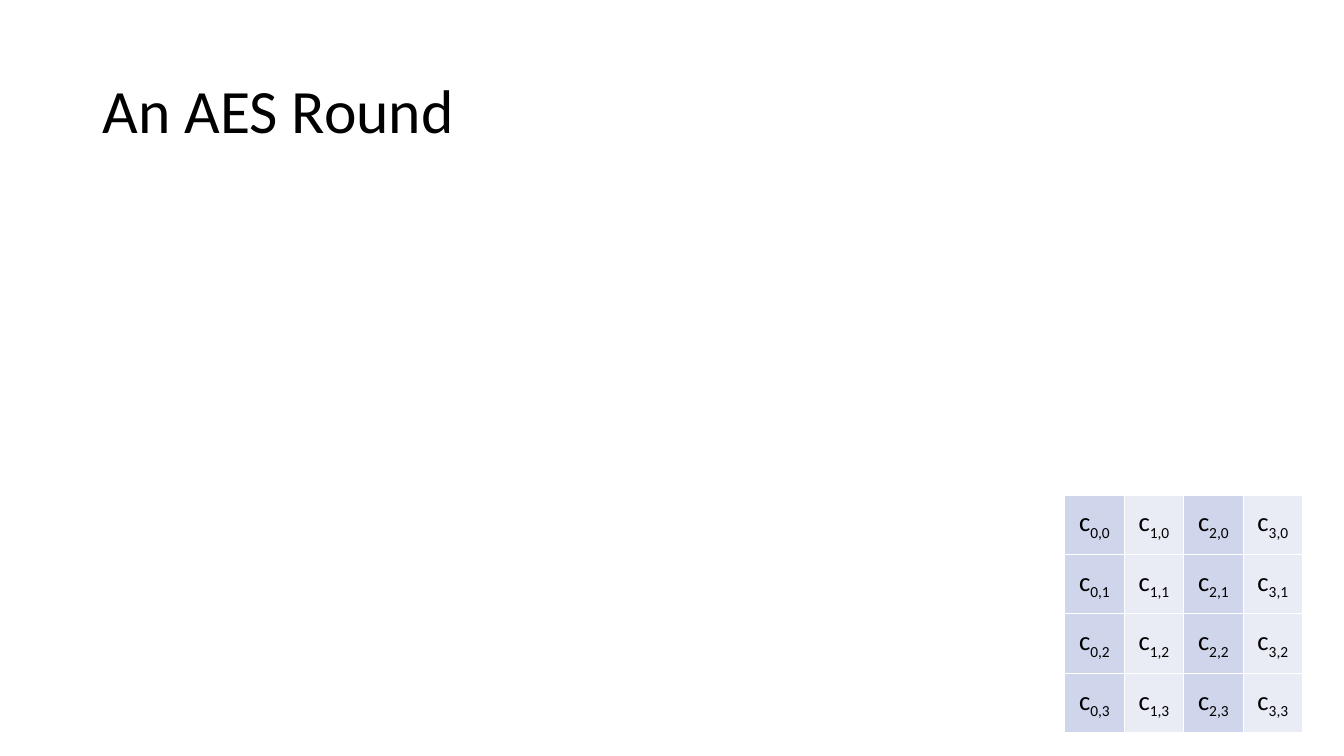
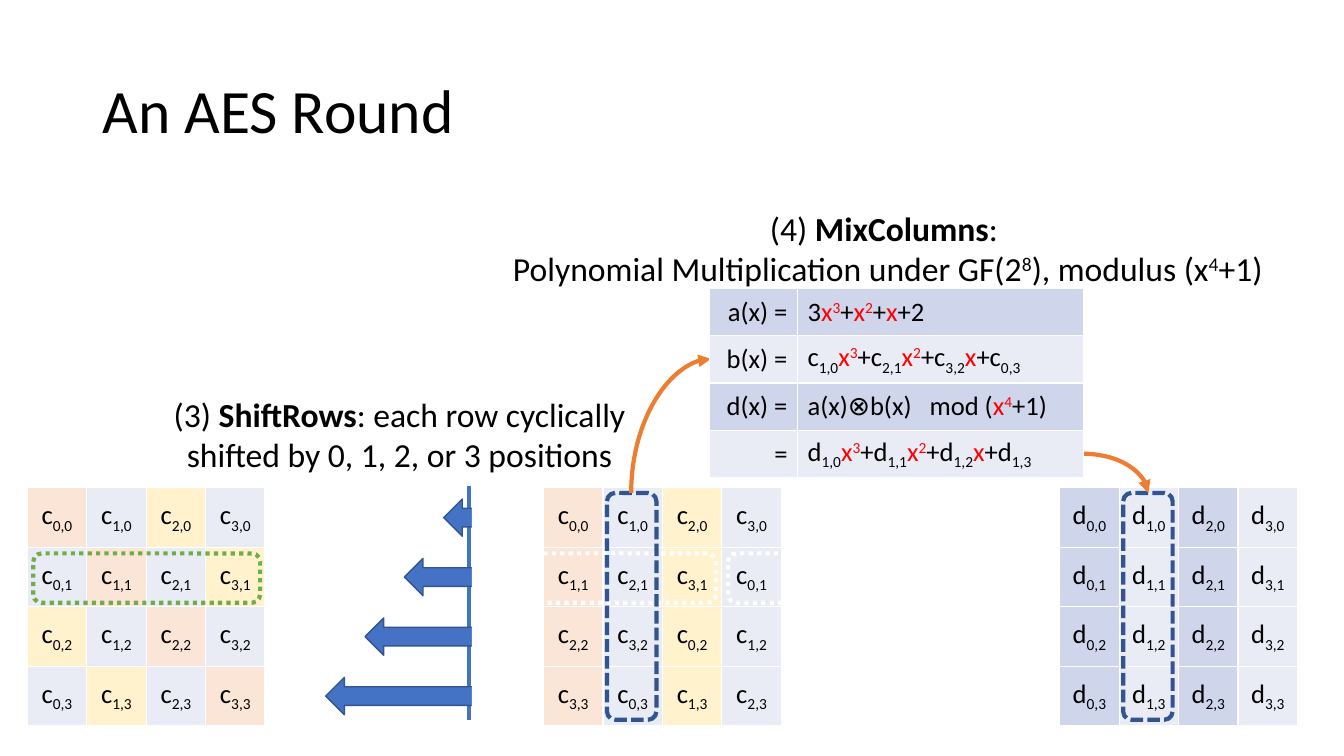
from lxml import etree
from pptx import Presentation
from pptx.dml.color import RGBColor
from pptx.enum.dml import MSO_LINE
from pptx.enum.shapes import MSO_CONNECTOR, MSO_SHAPE
from pptx.enum.text import MSO_ANCHOR, PP_ALIGN
from pptx.oxml.ns import qn
from pptx.util import Inches, Pt

LEFT, CENTER, RIGHT = PP_ALIGN.LEFT, PP_ALIGN.CENTER, PP_ALIGN.RIGHT
MIDDLE = MSO_ANCHOR.MIDDLE
STRAIGHT, CURVE = MSO_CONNECTOR.STRAIGHT, MSO_CONNECTOR.CURVE
DOTTED, DASHED = MSO_LINE.ROUND_DOT, MSO_LINE.SQUARE_DOT
ROUNDED, ARROW, RECTANGLE = (MSO_SHAPE.ROUNDED_RECTANGLE, MSO_SHAPE.RIGHT_ARROW,
                             MSO_SHAPE.RECTANGLE)

FONT = "Calibri"
HEX = {"black": "000000", "white": "FFFFFF", "red": "FF0000", "band": "CFD5EA",
       "pale": "E9EBF5", "peach": "FBE5D6", "yellow": "FFF2CC", "green": "70AD47",
       "blue": "4472C4", "navy": "325491", "orange": "ED7D31"}
COLORS = {name: RGBColor.from_string(value) for name, value in HEX.items()}
STRIPES = ["band", "pale", "band", "pale"]
DIAGONALS = ["peach", "pale", "yellow", "pale"]
CELL = 0.59
GRID_TOP = 4.84


def write(paragraph, markup, size, alignment=LEFT):
    """Parts are split by |; leading marks: _ sub, ^ super, * bold, ! red; / breaks the line."""
    paragraph.alignment = alignment
    paragraph.font.name = FONT
    paragraph.font.size = Pt(size)
    paragraph.font.color.rgb = COLORS["black"]
    for part in markup.split("|"):
        if part == "/":
            paragraph.add_line_break()
            continue
        run = paragraph.add_run()
        run.text = part.lstrip("_^*!")
        marks = part[:len(part) - len(run.text)]
        if "*" in marks:
            run.font.bold = True
        if "!" in marks:
            run.font.color.rgb = COLORS["red"]
        if "_" in marks or "^" in marks:
            baseline = "-25000" if "_" in marks else "30000"
            run.font._element.set("baseline", baseline)


def add_grid(slide, left, top, widths, row_height, rows, alignments):
    """Each cell in rows is a pair of markup and fill name."""
    frame = slide.shapes.add_table(len(rows), len(widths), Inches(left), Inches(top),
                                   Inches(sum(widths)), Inches(row_height * len(rows)))
    table = frame.table
    table.first_row = table.horz_banding = False
    for column, width in zip(table.columns, widths):
        column.width = Inches(width)
    for row_index, row in enumerate(rows):
        table.rows[row_index].height = Inches(row_height)
        for column_index, (markup, fill) in enumerate(row):
            cell = table.cell(row_index, column_index)
            cell.vertical_anchor = MIDDLE
            cell.fill.solid()
            cell.fill.fore_color.rgb = COLORS[fill]
            write(cell.text_frame.paragraphs[0], markup, 19, alignments[column_index])
    return table


presentation = Presentation()
presentation.slide_width = Inches(13.33)
presentation.slide_height = Inches(7.5)

# Both slides: title
slides = []
for _ in range(2):
    slide = presentation.slides.add_slide(presentation.slide_layouts[6])
    title = slide.shapes.add_textbox(Inches(0.92), Inches(0.4), Inches(11.5), Inches(1.45))
    title.text_frame.word_wrap = True
    title.text_frame.vertical_anchor = MIDDLE
    write(title.text_frame.paragraphs[0], "An AES Round", 44)
    title.text_frame.paragraphs[0].line_spacing = 0.9
    slides.append(slide)
start_slide, round_slide = slides

# Both slides: 4 x 4 state grids (letter, row shift, fill colours, diagonal fills)
for slide, left, top, letter, shift, fills, diagonal in [
        (start_slide, 10.56, 4.91, "c", 0, STRIPES, 0),
        (round_slide, 0.27, GRID_TOP, "c", 0, DIAGONALS, 1),
        (round_slide, 5.39, GRID_TOP, "c", 1, DIAGONALS, 0),
        (round_slide, 10.51, GRID_TOP, "d", 0, STRIPES, 0)]:
    state = [[(f"{letter}|_{(column + shift * row) % 4},{row}",
               fills[(column - diagonal * row) % 4])
              for column in range(4)] for row in range(4)]
    add_grid(slide, left, top, [CELL] * 4, CELL, state, [CENTER] * 4)

shapes = round_slide.shapes

# Slide 2: outlines around the shifted row and the mixed column
for left, top, width, height, color, dash in [
        (0.33, 5.49, 2.25, 0.49, "green", DOTTED),
        (4.85, 5.49, 2.25, 0.49, "white", DOTTED),
        (7.22, 5.49, 2.25, 0.49, "white", DOTTED),
        (6.02, 4.89, 0.49, 2.25, "navy", DASHED),
        (11.14, 4.89, 0.49, 2.25, "navy", DASHED)]:
    outline = shapes.add_shape(ROUNDED, Inches(left), Inches(top), Inches(width), Inches(height))
    outline.shadow.inherit = False
    outline.fill.background()
    outline.line.color.rgb = COLORS[color]
    outline.line.width = Pt(3)
    outline.line.dash_style = dash

# Slide 2: connectors (kind, from, to, colour, rotation)
for kind, begin, end, color, rotation in [
        (STRAIGHT, (4.65, 4.82), (4.65, 7.14), "blue", 0),
        (CURVE, (7.32, 4.62), (5.99, 3.83), "orange", 90),
        (CURVE, (10.72, 4.5), (11.39, 4.89), "orange", 0)]:
    connector = shapes.add_connector(kind, *map(Inches, begin + end))
    connector.line.color.rgb = COLORS[color]
    connector.line.width = Pt(3)
    properties = connector._element.spPr
    if kind == CURVE:
        properties.find(qn("a:prstGeom")).set("prst", "curvedConnector2")
        properties.find(qn("a:xfrm")).set("rot", str(rotation * 60000))
        etree.SubElement(properties.find(qn("a:ln")), qn("a:tailEnd"), type="triangle")
    etree.SubElement(properties, qn("a:effectLst"))

# Slide 2: shift arrows, one step longer per row, trimmed at the line
for row in range(4):
    width = 0.39 * (row + 1)
    arrow = shapes.add_shape(ARROW, Inches(4.79 - width), Inches(4.95 + CELL * row),
                             Inches(width), Inches(0.37))
    arrow.rotation = 180
    arrow.shadow.inherit = False
    arrow.fill.solid()
    arrow.fill.fore_color.rgb = COLORS["blue"]
    arrow.line.color.rgb = COLORS["navy"]
    arrow.line.width = Pt(1)
trim = shapes.add_shape(RECTANGLE, Inches(4.68), Inches(4.74), Inches(0.17), Inches(2.46))
trim.shadow.inherit = False
trim.fill.solid()
trim.fill.fore_color.rgb = COLORS["white"]
trim.line.fill.background()

# Slide 2: step captions
for left, top, width, markup in [
        (1.44, 3.86, 5.12,
         "(3) |*ShiftRows|: each row cyclically |/|shifted by 0, 1, 2, or 3 positions "),
        (4.6, 2.01, 8.41,
         "(4) |*MixColumns|: |/|Polynomial Multiplication under GF(2|^8|), modulus (x|^4|+1)")]:
    caption = shapes.add_textbox(Inches(left), Inches(top), Inches(width), Inches(0.91))
    caption.text_frame.word_wrap = True
    write(caption.text_frame.paragraphs[0], markup, 24, CENTER)

# Slide 2: polynomials
polynomials = [
    ("a(x) =", "3|!x|!^3|+|!x|!^2|+|!x|+2"),
    ("b(x) =", "c|_1,0|!x|!^3|+c|_2,1|!x|!^2|+c|_3,2|!x|+c|_0,3"),
    ("d(x) =", "a(x)⊗b(x)\tmod (|!x|!^4|+1)"),
    ("=", "d|_1,0|!x|!^3|+d|_1,1|!x|!^2|+d|_1,2|!x|+d|_1,3")]
polynomial_rows = [[(markup, fill) for markup in pair]
                   for pair, fill in zip(polynomials, STRIPES)]
polynomial_table = add_grid(round_slide, 7.04, 2.86, [0.87, 2.84], 0.47,
                            polynomial_rows, [RIGHT, LEFT])

# Tab stop before "mod"; it precedes the default run properties
product = polynomial_table.cell(2, 1).text_frame.paragraphs[0]
tab_list = etree.Element(qn("a:tabLst"))
etree.SubElement(tab_list, qn("a:tab"), pos=str(Inches(1.21)), algn="l")
product._p.pPr.insert(0, tab_list)

presentation.save("out.pptx")
